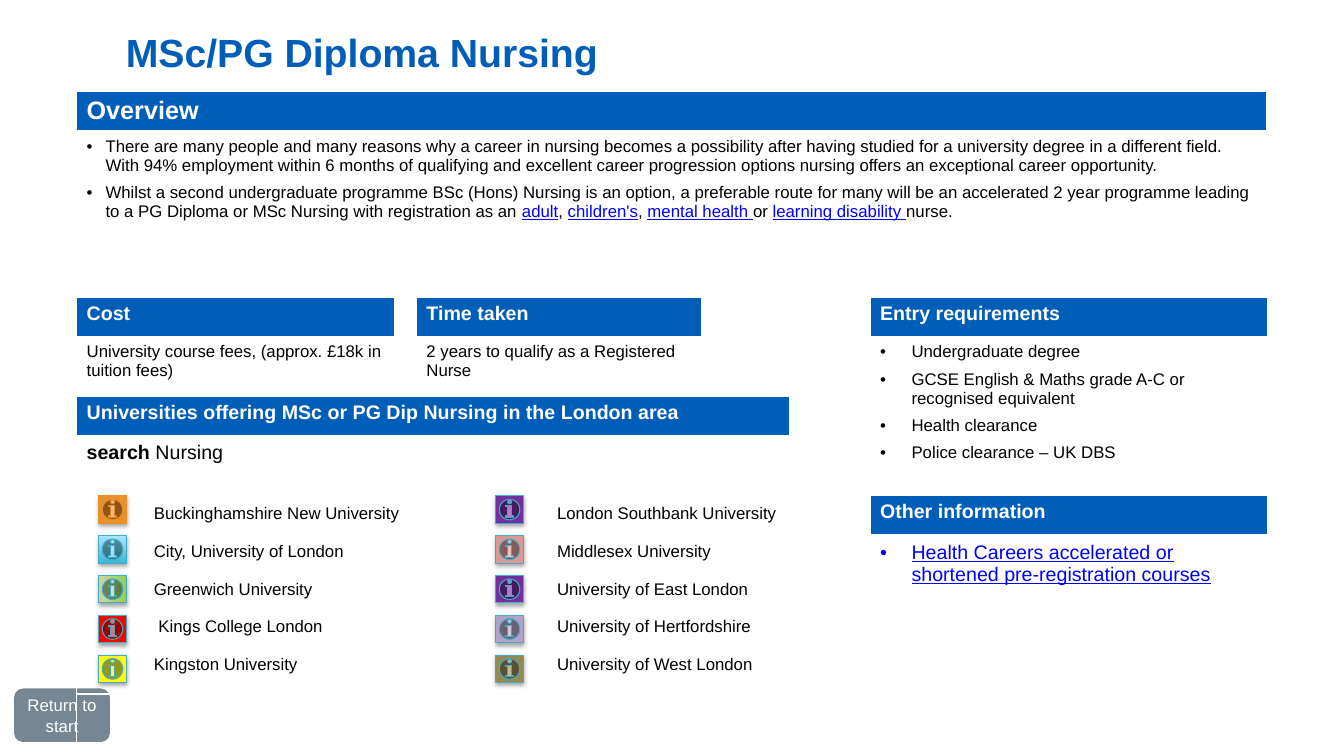
from lxml import etree
from pptx import Presentation
from pptx.dml.color import RGBColor
from pptx.enum import shapes, text
from pptx.oxml import ns
from pptx.util import Pt

# Content: a paragraph is a list of (words, style) spans
TITLE = "MSc/PG Diploma Nursing"
RETURN = "Return to start"
OVERVIEW = [
    [("There are many people and many reasons why a career in nursing becomes a possibility "
      "after having studied for a university degree in a different field. With 94% employment "
      "within 6 months of qualifying and excellent career progression options nursing offers "
      "an exceptional career opportunity.", "body")],
    [("Whilst a second undergraduate programme BSc (Hons) Nursing is an option, a preferable "
      "route for many will be an accelerated 2 year programme leading to a PG Diploma or MSc "
      "Nursing with registration as an ", "body"),
     ("adult", "link"), (", ", "body"), ("children's", "link"), (", ", "body"),
     ("mental health ", "link"), ("or ", "body"), ("learning disability ", "link"),
     ("nurse.", "body")],
]
ENTRY = [[(line, "body")] for line in (
    "Undergraduate degree",
    "GCSE English & Maths grade A-C or recognised equivalent",
    "Health clearance",
    "Police clearance – UK DBS",
)]
COST = [[("University course fees, (approx. £18k in tuition fees)", "body")]]
TIME = [[("2 years to qualify as a Registered Nurse", "body")]]
OTHER = [[("Health Careers accelerated or shortened pre-registration courses", "big link")]]

# heading, heading style, left, top, width, row heights, paragraphs, bullet indent
PANELS = [
    ("Entry requirements", "heading", 621.4, 212.4, 283.7, (28.8, 67), ENTRY, 22.5),
    ("Cost", "heading", 54.7, 212.4, 226.8, (28.8, 67), COST, 0),
    ("Overview", "top heading", 54.7, 65.5, 850.3, (20.2, 92.2), OVERVIEW, 13.5),
    ("Time taken", "heading", 297.4, 212.4, 203.8, (28.8, 67), TIME, 0),
    ("Other information", "heading", 621.4, 354.2, 283.7, (28.8, 67), OTHER, 22.5),
]
UNIVERSITY_PANEL = ("Universities offering MSc or PG Dip Nursing in the London area", "heading",
                    54.7, 283.3, 509, (28.8, 177.1, 49))
SEARCH = [("search", "search"), (" Nursing", "subject")]
UNIVERSITIES = [
    ("Buckinghamshire New University", "London Southbank University"),
    ("City, University of London", "Middlesex University"),
    ("Greenwich University", "University of East London"),
    (" Kings College London", "University of Hertfordshire"),
    ("Kingston University", "University of West London"),
]
# Icon fills: one colour, or (angle, gradient stops)
ICONS = [
    ("E98F2B", "7030A0"),
    ((90, [(0, "39B7D8"), (1, "A7E6FF")]), "DA9896"),
    ((0, [(0.17, "C3D69B"), (1, "92D050")]), "7030A0"),
    ("FF0000", "B3A2C7"),
    ("FFFF00", "948A54"),
]
ICON_LEFTS, ICON_TOP, ICON_STEP, ICON_SIZE = (70.6, 354.2), 354.2, 28.45, 19.6
NAME_TABS = (48, 336)

THEME = {
    "font": "Arial", "blue": "005EB8", "white": "FFFFFF", "grey": "768692",
    "icon line": "46AAC5",
    # size, colour, bold, underline
    "title": (28, "005EB8", True, False),
    "top heading": (18, "FFFFFF", True, False),
    "heading": (14, "FFFFFF", True, False),
    "body": (12, "000000", False, False),
    "link": (12, "0000FF", False, True),
    "big link": (14, "0000FF", False, True),
    "search": (14, "000000", True, False),
    "subject": (14, "000000", False, False),
    "button": (12, "FFFFFF", False, False),
}


def colour(code):
    return RGBColor.from_string(code)


def add_node(parent, tag, **attributes):
    return etree.SubElement(parent, ns.qn("a:" + tag), attributes)


def write(para, spans):
    for words, style in spans:
        span = para.add_run()
        span.text = words
        size, code, span.font.bold, span.font.underline = THEME[style]
        span.font.name, span.font.size = THEME["font"], Pt(size)
        span.font.color.rgb = colour(code)


def style_cell(cell, fill, bottom):
    properties = cell._tc.get_or_add_tcPr()
    for side in "LRTB":
        width = bottom if side == "B" else 1
        line = add_node(properties, "ln" + side, w=str(Pt(width)))
        add_node(add_node(line, "solidFill"), "srgbClr", val=THEME["white"])
    if fill:
        cell.fill.solid()
        cell.fill.fore_color.rgb = colour(fill)
    else:
        cell.fill.background()


def add_panel(page, heading, style, left, top, width, heights, body_fill):
    table = page.shapes.add_table(len(heights), 1, Pt(left), Pt(top), Pt(width),
                                  Pt(sum(heights))).table
    table.first_row = table.horz_banding = False
    for index, height in enumerate(heights):
        table.rows[index].height = Pt(height)
        if index == 0:
            style_cell(table.cell(0, 0), THEME["blue"], 3)
        else:
            style_cell(table.cell(index, 0), body_fill, 1)
    write(table.cell(0, 0).text_frame.paragraphs[0], [(heading, style)])
    return table.cell(1, 0).text_frame


def next_para(frame, index):
    return frame.add_paragraph() if index else frame.paragraphs[0]


def add_icon(page, left, top, fill):
    icon = page.shapes.add_shape(shapes.MSO_SHAPE.ACTION_BUTTON_INFORMATION, Pt(left), Pt(top),
                                 Pt(ICON_SIZE), Pt(ICON_SIZE))
    if isinstance(fill, str):
        icon.fill.solid()
        icon.fill.fore_color.rgb = colour(fill)
    else:
        icon.fill.gradient()
        icon.fill.gradient_angle = fill[0]
        for stop, (position, code) in zip(icon.fill.gradient_stops, fill[1]):
            stop.position, stop.color.rgb = position, colour(code)
    icon.line.width = Pt(0.75)
    icon.line.color.rgb = colour(fill if fill == ICONS[0][0] else THEME["icon line"])
    icon.shadow.inherit = False
    effects = icon._element.spPr.find(ns.qn("a:effectLst"))
    shadow = add_node(effects, "outerShdw", blurRad=str(Pt(3.1)), dist=str(Pt(1.8)),
                      dir="5400000", rotWithShape="0")
    add_node(add_node(shadow, "srgbClr", val="000000"), "alpha", val="35000")


def main():
    deck = Presentation()
    deck.slide_width, deck.slide_height = Pt(960), Pt(540)
    page = deck.slides.add_slide(deck.slide_layouts[6])

    # Title
    box = page.shapes.add_textbox(Pt(82.8), Pt(14.4), Pt(793.4), Pt(55.4))
    box.text_frame.word_wrap = True
    box.text_frame.margin_top = Pt(6)
    write(box.text_frame.paragraphs[0], [(TITLE, "title")])

    # Heading panels
    for *frame_parts, paragraphs, indent in PANELS:
        frame = add_panel(page, *frame_parts, THEME["white"])
        for index, spans in enumerate(paragraphs):
            para = next_para(frame, index)
            if indent:
                properties = para._p.get_or_add_pPr()
                properties.set("marL", str(Pt(indent)))
                properties.set("indent", str(-Pt(indent)))
                add_node(properties, "buFont", typeface=THEME["font"])
                add_node(properties, "buChar", char="•")
                para.space_after = Pt(6)
            write(para, spans)

    # Return button
    button = page.shapes.add_shape(shapes.MSO_SHAPE.ROUNDED_RECTANGLE, Pt(10.1), Pt(491.8),
                                   Pt(68.4), Pt(38.2))
    button.shadow.inherit = False
    button.fill.solid()
    button.fill.fore_color.rgb = colour(THEME["grey"])
    button.line.fill.background()
    button.text_frame.vertical_anchor = text.MSO_ANCHOR.MIDDLE
    button.text_frame.paragraphs[0].alignment = text.PP_ALIGN.CENTER
    write(button.text_frame.paragraphs[0], [(RETURN, "button")])

    # Information icons
    for row, fills in enumerate(ICONS):
        for left, fill in zip(ICON_LEFTS, fills):
            add_icon(page, left, ICON_TOP + row * ICON_STEP, fill)

    # University list
    frame = add_panel(page, *UNIVERSITY_PANEL, None)
    write(frame.paragraphs[0], SEARCH)
    frame.paragraphs[0].space_after = Pt(15.6)
    for names in UNIVERSITIES:
        para = frame.add_paragraph()
        tabs = add_node(para._p.get_or_add_pPr(), "tabLst")
        for stop in NAME_TABS:
            add_node(tabs, "tab", pos=str(Pt(stop)), algn="l")
        para.line_spacing = 2.0
        write(para, [("\t" + "\t".join(names), "body")])

    deck.save("out.pptx")


if __name__ == "__main__":
    main()
